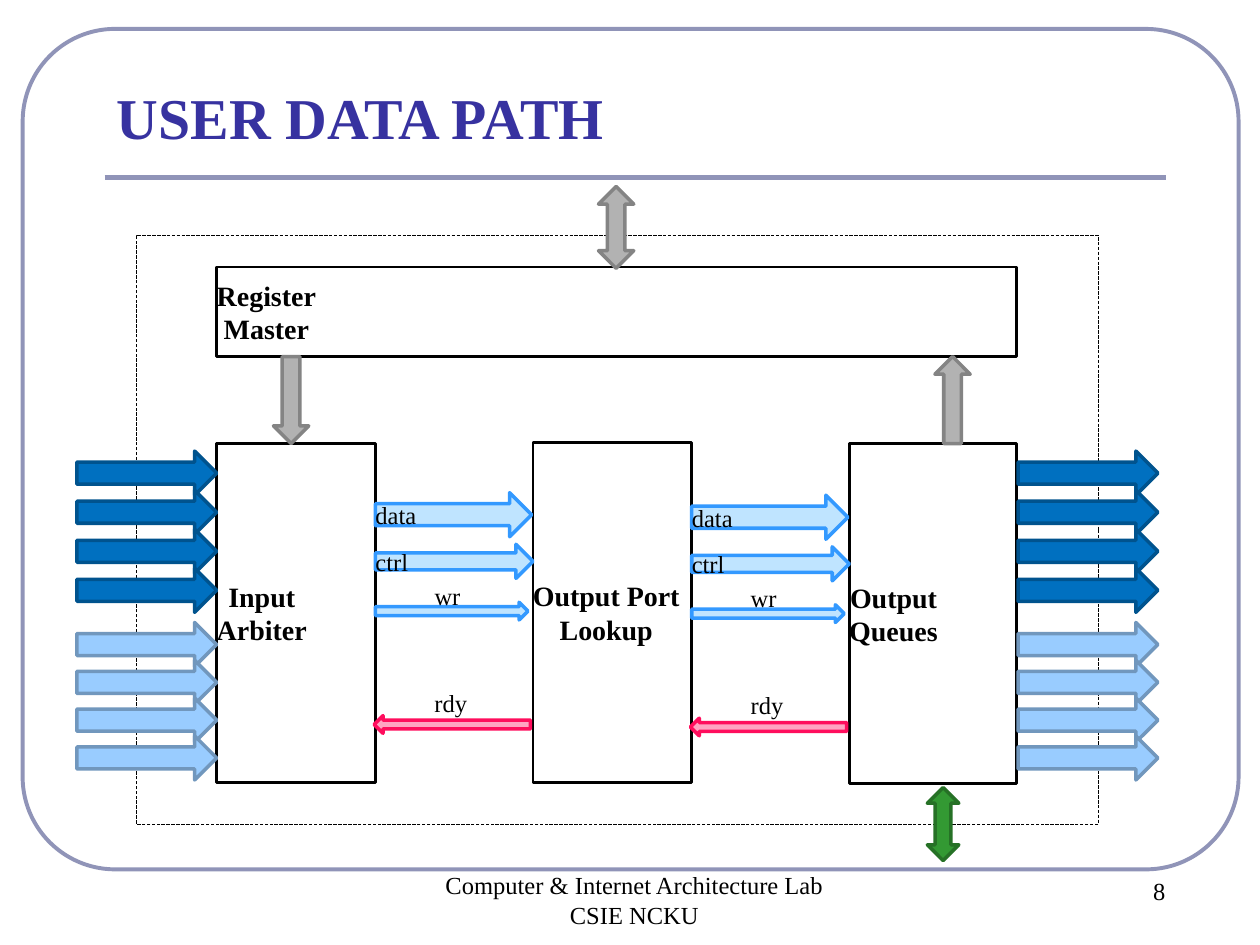
from lxml import etree
from pptx import Presentation
from pptx.dml.color import RGBColor
from pptx.enum import dml, shapes, text
from pptx.oxml import ns
from pptx.util import Inches, Pt

FONT = "Times New Roman"
COLORS = {
    "title": "3732A0", "frame": "9094B8", "black": "000000", "white": "FFFFFF",
    "port": "0070C0", "port_edge": "00538E",
    "queue": "99CCFF", "queue_edge": "7197BD",
    "register": "B2B2B2", "register_edge": "848484",
    "signal": "BFE4FF", "signal_edge": "3399FF",
    "ready": "FFA3C2", "ready_edge": "FF0D5D",
    "output": "339933", "output_edge": "267126",
}
SHAPE = shapes.MSO_SHAPE
CENTER = text.PP_ALIGN.CENTER


def color(name):
    return RGBColor.from_string(COLORS[name])


def write(frame, words, size, bold=False, ink="black", align=None):
    frame.text = words
    for para in frame.paragraphs:
        para.alignment = align
        for span in para.runs:
            span.font.name = FONT
            span.font.size = Pt(size)
            span.font.bold = bold
            span.font.color.rgb = color(ink)


def add_text(page, words, left, top, width, height, size=14, wrap=True, **style):
    box = page.shapes.add_textbox(Inches(left), Inches(top), Inches(width), Inches(height))
    frame = box.text_frame
    frame.word_wrap = wrap
    if not wrap:
        frame.auto_size = text.MSO_AUTO_SIZE.SHAPE_TO_FIT_TEXT
    write(frame, words, size, **style)
    return box


def add_block(page, kind, left, top, width, height, fill, edge, weight=2, turn=0):
    """Place a shape by the area it covers after being turned."""
    if turn in (90, 270):
        left, top = left + (width - height) / 2, top + (height - width) / 2
        width, height = height, width
    block = page.shapes.add_shape(kind, Inches(left), Inches(top), Inches(width), Inches(height))
    block.rotation = turn
    block.shadow.inherit = False
    if fill:
        block.fill.solid()
        block.fill.fore_color.rgb = color(fill)
    else:
        block.fill.background()
    block.line.color.rgb = color(edge)
    block.line.width = Pt(weight)
    return block


def add_turned_text(block, words, size, bold=False):
    """Vertical text in a shape turned by 270 degrees reads upright."""
    frame = block.text_frame
    frame.margin_left = frame.margin_right = frame.margin_top = frame.margin_bottom = 0
    frame.vertical_anchor = text.MSO_ANCHOR.MIDDLE
    frame.word_wrap = True
    write(frame, words, size, bold=bold, align=CENTER)
    frame._txBody.bodyPr.set("vert", "eaVert")


def add_module(page, words, left, top, width, height):
    block = add_block(page, SHAPE.RECTANGLE, left, top, width, height,
                      "white", "black", 1.5, turn=270)
    add_turned_text(block, words, 16, bold=True)


def add_arrow(page, left, top, width, height, style, turn=0, kind=SHAPE.DOWN_ARROW):
    return add_block(page, kind, left, top, width, height, style, style + "_edge", turn=turn)


def add_ports(page, left):
    """Four dark arrows above four light ones."""
    for style, first, step in (("port", 3.58, 0.31), ("queue", 4.94, 0.3)):
        for row in range(4):
            add_arrow(page, left, first + row * step, 1.11, 0.35, style, turn=270)


def add_bus(page, left, drop):
    """Signals between two neighbouring modules."""
    for name, top, width, height in (("data", 3.91, 1.24, 0.35), ("ctrl", 4.32, 1.25, 0.27)):
        arrow = add_arrow(page, left, top + drop, width, height, "signal", turn=270)
        add_turned_text(arrow, name, 14)
    add_arrow(page, left, 4.78 + drop, 1.21, 0.14, "signal", turn=270)
    add_arrow(page, left - 0.01, 5.68 + drop, 1.24, 0.14, "ready", turn=90)
    add_text(page, "wr", left + 0.37, 4.56 + drop, 0.41, 0.34, wrap=False)
    add_text(page, "rdy", left + 0.37, 5.41 + drop, 0.46, 0.34, wrap=False)


def add_page_frame(page):
    border = add_block(page, SHAPE.ROUNDED_RECTANGLE, 0.18, 0.23, 9.65, 6.67,
                       None, "frame", 2.25)
    border.adjustments[0] = 0.11
    rule = page.shapes.add_connector(shapes.MSO_CONNECTOR.STRAIGHT, Inches(0.83), Inches(1.41),
                                     Inches(9.25), Inches(1.41))
    rule.line.color.rgb = color("frame")
    rule.line.width = Pt(3)
    etree.SubElement(rule._element.spPr, ns.qn("a:effectLst"))
    title = add_text(page, "USER DATA PATH", 0.83, 0.6, 8.42, 0.65, 33, bold=True, ink="title")
    title.text_frame.vertical_anchor = text.MSO_ANCHOR.BOTTOM
    add_text(page, "Computer & Internet Architecture Lab\nCSIE NCKU",
             2.87, 6.86, 4.33, 0.5, align=CENTER)
    add_text(page, "8", 8.66, 6.9, 1.08, 0.5, align=CENTER)


def main():
    deck = Presentation()
    deck.slide_width, deck.slide_height = Inches(10), Inches(7.5)
    page = deck.slides.add_slide(deck.slide_layouts[6])
    add_page_frame(page)

    # Boundary of the data path
    boundary = add_block(page, SHAPE.RECTANGLE, 1.08, 1.87, 7.64, 4.67,
                         None, "black", 0.25, turn=270)
    boundary.line.dash_style = dml.MSO_LINE.LONG_DASH

    # Modules
    add_module(page, "Input Arbiter", 1.72, 3.52, 1.26, 2.69)
    add_module(page, "Output Port\nLookup", 4.23, 3.51, 1.26, 2.7)
    add_module(page, "Output Queues", 6.74, 3.52, 1.33, 2.7)
    add_module(page, "Register\nMaster", 1.72, 2.12, 6.35, 0.71)

    # Incoming and outgoing ports
    for left in (0.61, 8.08):
        add_ports(page, left)

    # Register chain and external links
    add_arrow(page, 2.17, 2.83, 0.28, 0.69, "register")
    add_arrow(page, 7.42, 2.83, 0.28, 0.69, "register", turn=180)
    add_arrow(page, 4.75, 1.48, 0.28, 0.65, "register", kind=SHAPE.UP_DOWN_ARROW)
    add_arrow(page, 7.36, 6.25, 0.25, 0.58, "output", kind=SHAPE.UP_DOWN_ARROW)

    # Signals between modules
    add_bus(page, 2.98, 0)
    add_bus(page, 5.49, 0.02)

    deck.save("out.pptx")


if __name__ == "__main__":
    main()
